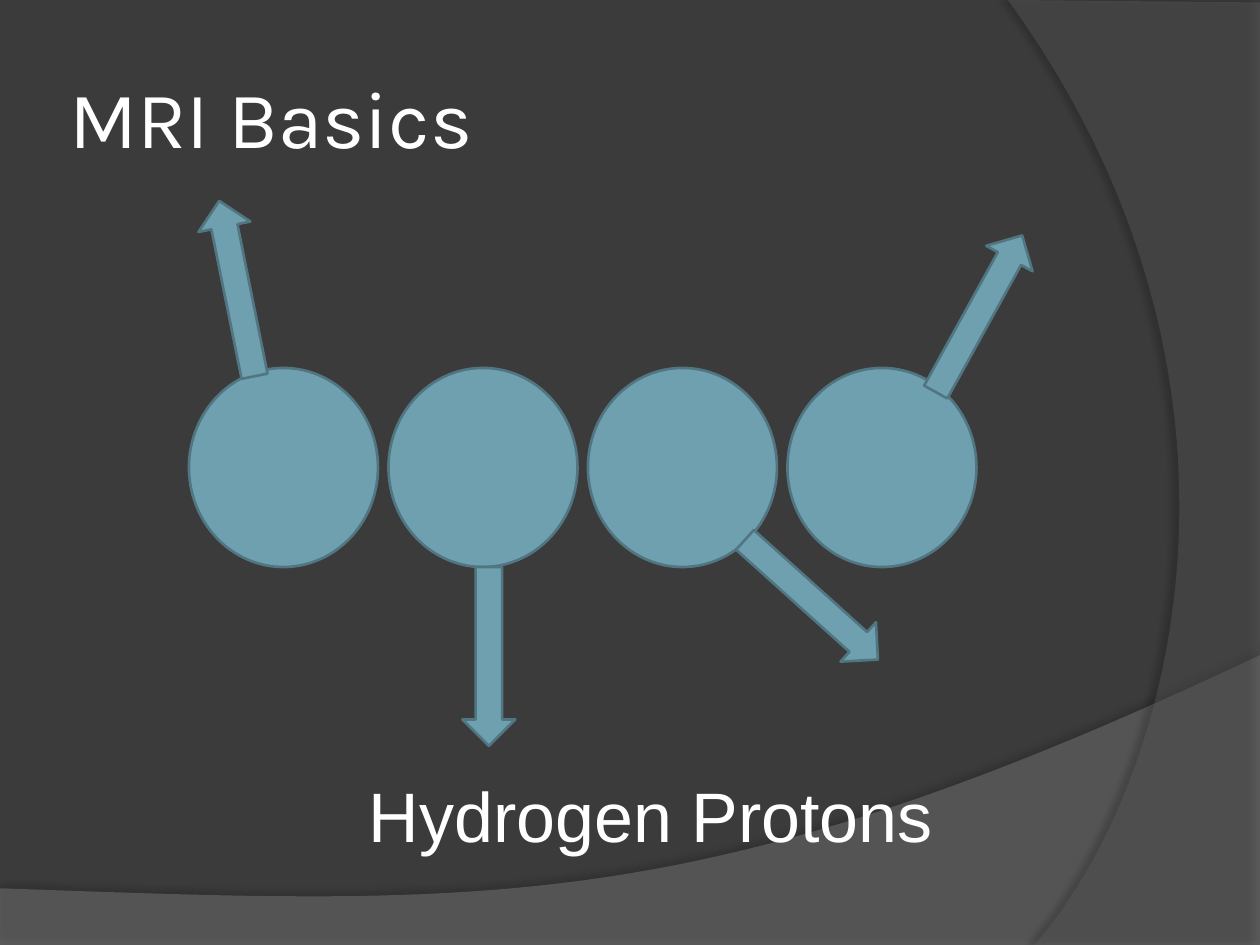
from lxml import etree
from pptx import Presentation
from pptx.dml.color import RGBColor
from pptx.enum import shapes as sh, text as tx
from pptx.oxml import ns
from pptx.util import Inches, Pt

BLUE, EDGE, WHITE = "6EA0B0", "517682", "FFFFFF"


def paint(fill, tone):
    """Give a fill one solid colour."""
    fill.solid()
    fill.fore_color.rgb = RGBColor.from_string(tone)


def add(node, tag, **attrs):
    """Append a drawing element to a node."""
    return etree.SubElement(node, ns.qn(tag), **{k: str(v) for k, v in attrs.items()})


def curve(a, b, c, d, steps=48):
    """Return points along a cubic curve after its start."""
    spots = []
    for i in range(1, steps + 1):
        t = i / steps
        mix = ((1 - t) ** 3, 3 * t * (1 - t) ** 2, 3 * t * t * (1 - t), t ** 3)
        spots.append(tuple(sum(m * p[k] for m, p in zip(mix, (a, b, c, d))) for k in (0, 1)))
    return spots


def sweep(slide, points, tone, alpha, shade, gap, angle):
    """Draw a translucent background sweep with a soft shadow."""
    first, *rest = [(Inches(x), Inches(y)) for x, y in points]
    pen = slide.shapes.build_freeform(*first)
    pen.add_line_segments(rest)
    form = pen.convert_to_shape()
    paint(form.fill, tone)
    form.line.fill.background()
    props = form.fill._xPr
    add(props.find(".//" + ns.qn("a:srgbClr")), "a:alpha", val=alpha * 1000)
    drop = add(add(props, "a:effectLst"), "a:outerShdw", blurRad=Pt(4), dist=Pt(gap),
               dir=angle * 60000, algn="ctr", rotWithShape=0)
    add(add(drop, "a:srgbClr", val="000000"), "a:alpha", val=shade * 1000)


def backdrop(slide, wide, high):
    """Draw the dark background and its two sweeps in the given box."""
    paint(slide.background.fill, "3B3B3B")
    low = curve((wide, 5.2), (5.59, 7.29), (3.91, 7.19), (0, 7.05))
    sweep(slide, [(0, high), (wide, high), (wide, 5.2)] + low, "7F7F7F", 45, 35, 3.5, 270)
    side = curve((8.21, high), (9.35, 6.19), (10.18, 3), (8, 0))
    sweep(slide, [(wide, 0.02), (wide, high), (8.21, high)] + side, "5E5E5E", 40, 45, 4, 180)


def label(shape, words, size, face, align):
    """Write one white run into a shape."""
    para = shape.text_frame.paragraphs[0]
    para.alignment = align
    run = para.add_run()
    run.text = words
    run.font.size, run.font.name = Pt(size), face
    run.font.color.rgb = RGBColor.from_string(WHITE)


def heading(slide, left, top, wide, high):
    """Place the title in the given box."""
    title = slide.shapes.title
    title.left, title.top = Inches(left), Inches(top)
    title.width, title.height = Inches(wide), Inches(high)
    frame = title.text_frame
    frame.auto_size = tx.MSO_AUTO_SIZE.NONE
    frame.vertical_anchor = tx.MSO_ANCHOR.MIDDLE
    frame.margin_left = frame.margin_right = Inches(0.05)
    label(title, "MRI Basics", 46, "Karla", tx.PP_ALIGN.LEFT)


def solid(slide, kind, left, top, wide, high, turn=0):
    """Draw one blue outlined shape."""
    form = slide.shapes.add_shape(kind, Inches(left), Inches(top), Inches(wide), Inches(high))
    form.rotation = turn
    form.shadow.inherit = False
    paint(form.fill, BLUE)
    paint(form.line.fill, EDGE)
    form.line.width = Pt(1.5)


def protons(slide, left, top, wide, high):
    """Draw a row of protons with their spin arrows in the given box."""
    size, count = 1.5, 4
    step = (wide - size) / (count - 1)
    for i in range(count):
        solid(slide, sh.MSO_SHAPE.OVAL, left + i * step, top, size, high)
    spins = [(0.17, -1.34, 348.6), (4.73, 1.13, 132), (2.17, 1.58, 180), (6.06, -1.14, 28.9)]
    for x, y, turn in spins:
        solid(slide, sh.MSO_SHAPE.UP_ARROW, left + x, top + y, 0.42, 1.42, turn)


def caption(slide, left, top, wide, high):
    """Place the caption in the given box."""
    box = slide.shapes.add_textbox(Inches(left), Inches(top), Inches(wide), Inches(high))
    box.text_frame.word_wrap = True
    box.text_frame.auto_size = tx.MSO_AUTO_SIZE.SHAPE_TO_FIT_TEXT
    label(box, "Hydrogen Protons", 40, "Arial", tx.PP_ALIGN.CENTER)


def main():
    """Build and save the slide."""
    deck = Presentation()
    deck.slide_width, deck.slide_height = Inches(10), Inches(7.5)
    slide = deck.slides.add_slide(deck.slide_layouts[5])
    backdrop(slide, 10, 7.5)
    heading(slide, 0.5, 0.3, 8.17, 1.25)
    protons(slide, 1.5, 2.92, 6.25, 1.58)
    caption(slide, 2.25, 6.08, 5.83, 0.77)
    deck.save("out.pptx")


if __name__ == "__main__":
    main()
